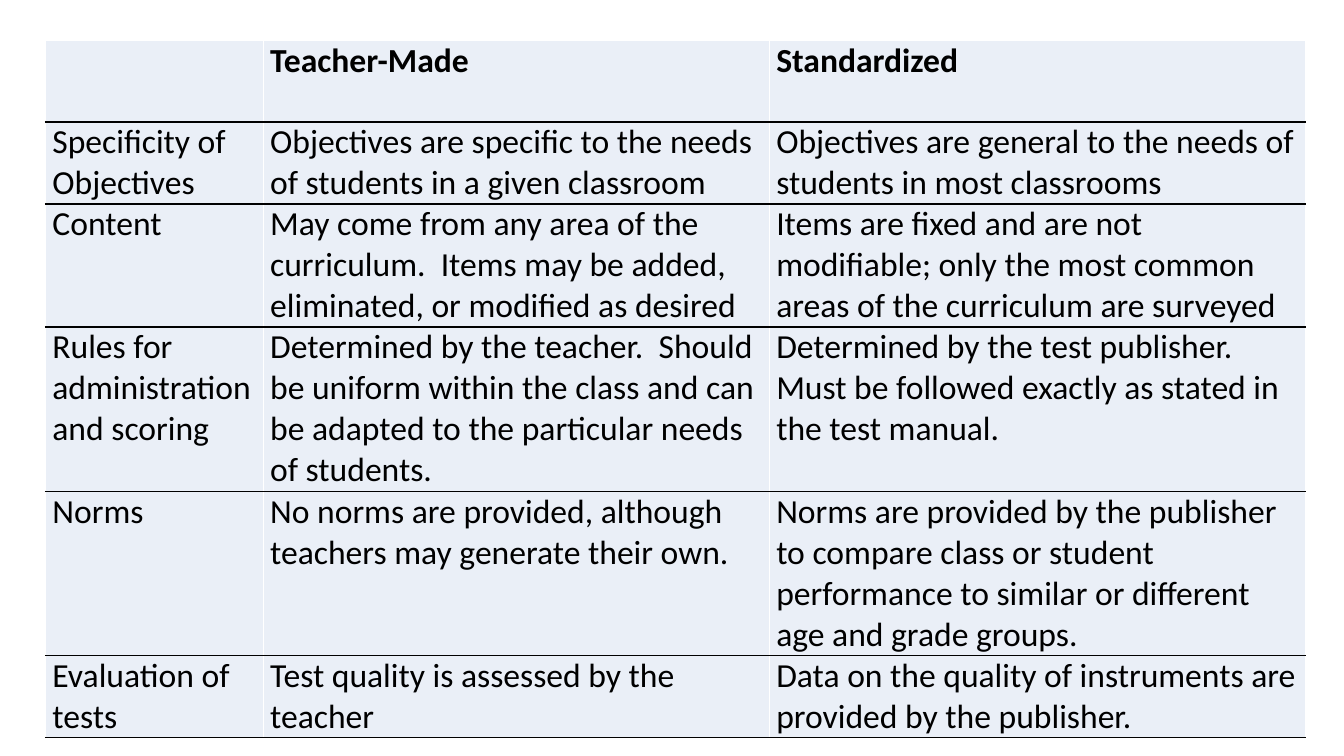
import pptx
import pptx.dml.color
import pptx.oxml
import pptx.oxml.ns
import pptx.util
from pptx.util import Inches

COLUMN_WIDTHS = [2.16, 5.02, 5.32]
ROW_HEIGHTS = [0.81, 0.81, 1.22, 1.63, 1.63, 0.81]
COMPARISON = [
    ("", "Teacher-Made", "Standardized"),
    ("Specificity of Objectives",
     "Objectives are specific to the needs of students in a given classroom",
     "Objectives are general to the needs of students in most classrooms"),
    ("Content",
     "May come from any area of the curriculum.  Items may be added, "
     "eliminated, or modified as desired",
     "Items are fixed and are not modifiable; only the most common areas "
     "of the curriculum are surveyed"),
    ("Rules for administration and scoring",
     "Determined by the teacher.  Should be uniform within the class and can "
     "be adapted to the particular needs of students.",
     "Determined by the test publisher.  Must be followed exactly as stated "
     "in the test manual."),
    ("Norms",
     "No norms are provided, although teachers may generate their own.",
     "Norms are provided by the publisher to compare class or student "
     "performance to similar or different age and grade groups."),
    ("Evaluation of tests",
     "Test quality is assessed by the teacher",
     "Data on the quality of instruments are provided by the publisher."),
]


def rgb(value):
    return pptx.dml.color.RGBColor.from_string(value)


def write(frame, text, font="Calibri", size=24, color="000000", bold=False):
    run = frame.paragraphs[0].add_run()
    run.text = text
    run.font.name = font
    run.font.size = pptx.util.Pt(size)
    run.font.bold = bold
    run.font.color.rgb = rgb(color)


class SlideBuilder:
    """Holds the table style and the current slide."""
    cell_fill = "EAEFF7"
    rule = "000000"
    gap = "FFFFFF"
    side_margin = Inches(0.07)

    def __init__(self, slide):
        self.slide = slide

    def border(self, cell, side, color):
        cell._tc.get_or_add_tcPr().append(pptx.oxml.parse_xml(
            f'<a:ln{side} {pptx.oxml.ns.nsdecls("a")} w="12700"><a:solidFill>'
            f'<a:srgbClr val="{color}"/></a:solidFill></a:ln{side}>'))

    def cell(self, cell, text, header):
        cell.margin_left = cell.margin_right = self.side_margin
        cell.margin_top = cell.margin_bottom = 0
        # Borders come before the fill in the cell properties
        top = self.gap if header else self.rule
        for side, color in zip("LRTB", (self.gap, self.gap, top, self.rule)):
            self.border(cell, side, color)
        cell.fill.solid()
        cell.fill.fore_color.rgb = rgb(self.cell_fill)
        if text:
            write(cell.text_frame, text, bold=header)

    def table(self, left, top, widths, heights, rows):
        table = self.slide.shapes.add_table(
            len(heights), len(widths), Inches(left), Inches(top),
            Inches(sum(widths)), Inches(sum(heights))).table
        table.horz_banding = False
        for column, width in zip(table.columns, widths):
            column.width = Inches(width)
        for index, (row, height) in enumerate(zip(table.rows, heights)):
            row.height = Inches(height)
            for cell, text in zip(row.cells, rows[index]):
                self.cell(cell, text, header=index == 0)


def main():
    deck = pptx.Presentation()
    deck.slide_width, deck.slide_height = Inches(13.33), Inches(7.5)
    blank_layout = deck.slide_layouts[6]
    builder = SlideBuilder(deck.slides.add_slide(blank_layout))

    # Comparison of the two kinds of test
    builder.table(0.45, 0.4, COLUMN_WIDTHS, ROW_HEIGHTS, COMPARISON)
    deck.save("out.pptx")


if __name__ == "__main__":
    main()
